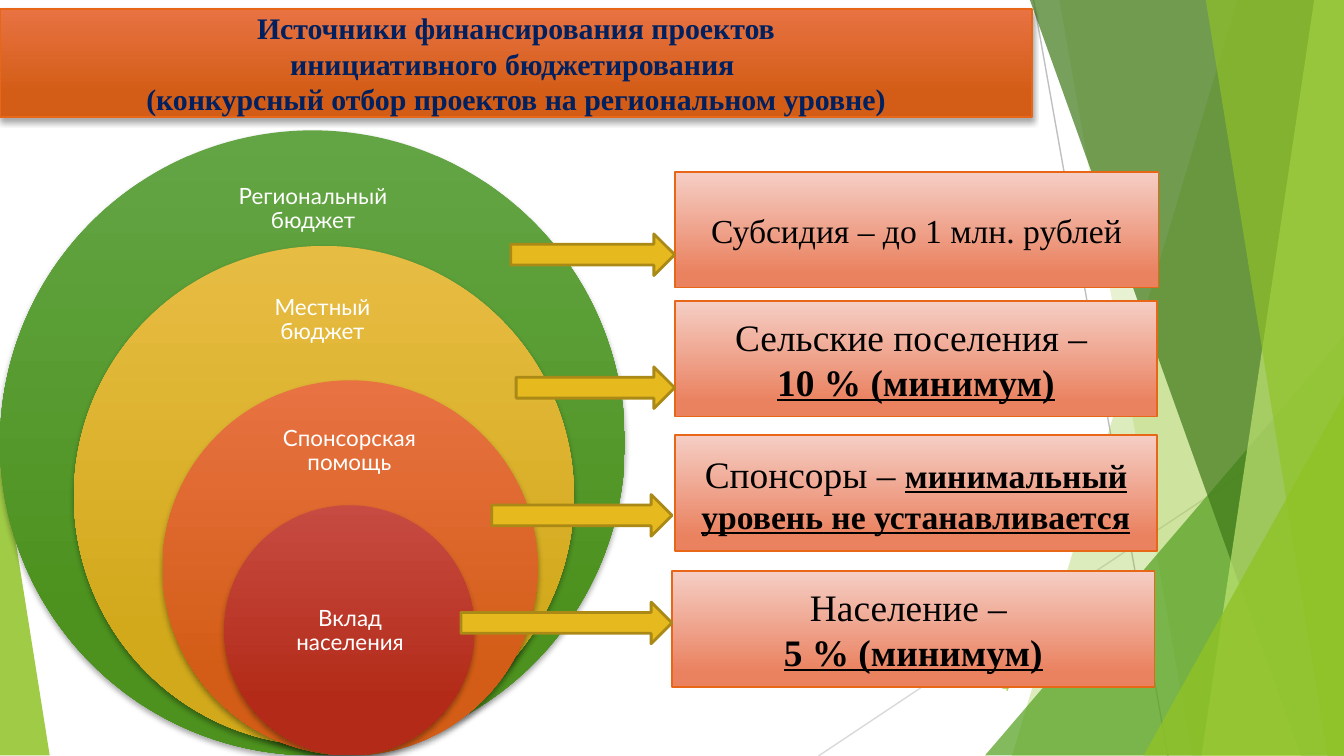
from lxml import etree
from pptx import Presentation
from pptx import util as u
from pptx.dml.color import RGBColor
from pptx.enum import shapes, text
from pptx.oxml import ns

WIDTH, BLEED = 10, -0.01
HEIGHT = WIDTH * 9 / 16
WHITE = RGBColor(0xFF, 0xFF, 0xFF)
BLACK = RGBColor(0x00, 0x00, 0x00)
NAVY = RGBColor(0x00, 0x20, 0x60)
LIME = RGBColor(0x90, 0xC2, 0x26)
PALE_LIME = RGBColor(0xC0, 0xE4, 0x74)
LEAF = RGBColor(0x54, 0xA0, 0x21)
FOREST = RGBColor(0x3F, 0x78, 0x19)
GREY = RGBColor(0xBF, 0xBF, 0xBF)
LIGHT_GREY = RGBColor(0xD9, 0xD9, 0xD9)
ORANGE_EDGE = RGBColor(0xE7, 0x66, 0x18)
GOLD = RGBColor(0xE6, 0xB9, 0x1E)
GOLD_EDGE = RGBColor(0xAA, 0x89, 0x16)
GREEN_BLEND = (RGBColor(0x63, 0xA5, 0x45), RGBColor(0x4D, 0x92, 0x1E), 0.78)
YELLOW_BLEND = (RGBColor(0xE7, 0xBC, 0x43), RGBColor(0xD2, 0xA9, 0x1B), 0.78)
ORANGE_BLEND = (RGBColor(0xE8, 0x72, 0x42), RGBColor(0xD3, 0x5D, 0x16), 0.78)
RED_BLEND = (RGBColor(0xC7, 0x4B, 0x42), RGBColor(0xB3, 0x2B, 0x18), 0.78)
PEACH_BLEND = (RGBColor(0xF5, 0xCE, 0xC5), RGBColor(0xEA, 0x81, 0x5F), 0.88)
SERIF, SANS = "Times New Roman", "Lato"


def paint(shape, color, opacity=100, edge=None, edge_width=1, shadow=False):
    """Fill a shape with one colour or a (top, bottom, stop) blend."""
    shape.shadow.inherit = False
    properties = shape.element.spPr
    if isinstance(color, RGBColor):
        shape.fill.solid()
        shape.fill.fore_color.rgb = color
        if opacity < 100:
            tint = properties.find(ns.qn("a:solidFill"))[0]
            etree.SubElement(tint, ns.qn("a:alpha"), val=str(opacity * 1000))
    else:
        top, bottom, position = color
        shape.fill.gradient()
        shape.fill.gradient_angle = 270
        for stop, tone, place in zip(shape.fill.gradient_stops, (top, bottom), (0, position)):
            stop.color.rgb = tone
            stop.position = place
    if edge is None:
        shape.line.fill.background()
    else:
        shape.line.color.rgb = edge
        shape.line.width = u.Pt(edge_width)
    if shadow:
        effects = properties.find(ns.qn("a:effectLst"))
        outer = etree.SubElement(effects, ns.qn("a:outerShdw"), blurRad=str(u.Pt(3)),
                                 dist=str(u.Pt(2)), dir="5400000", rotWithShape="0")
        shade = etree.SubElement(outer, ns.qn("a:srgbClr"), val="000000")
        etree.SubElement(shade, ns.qn("a:alpha"), val="35000")


def write(shape, paragraphs, color, base, align=text.PP_ALIGN.CENTER, spacing=None):
    """Each paragraph is a list of (words, font changes) runs."""
    frame = shape.text_frame
    frame.word_wrap = True
    frame.vertical_anchor = text.MSO_ANCHOR.MIDDLE
    for index, runs in enumerate(paragraphs):
        paragraph = frame.paragraphs[0] if index == 0 else frame.add_paragraph()
        paragraph.alignment = align
        if spacing:
            paragraph.line_spacing = spacing
        for words, changes in runs:
            run = paragraph.add_run()
            run.text = words
            run.font.color.rgb = color
            for name, value in {**base, **changes}.items():
                setattr(run.font, name, value)


presentation = Presentation()
presentation.slide_width = u.Inches(WIDTH)
presentation.slide_height = u.Inches(HEIGHT)
slide = presentation.slides.add_slide(presentation.slide_layouts[6])
kinds = shapes.MSO_SHAPE

# Thin background lines
for ends, color in [((7.69, 0, 8.69, HEIGHT), GREY), ((WIDTH, 3.02, 6.09, HEIGHT), LIGHT_GREY)]:
    line = slide.shapes.add_connector(shapes.MSO_CONNECTOR.STRAIGHT, *map(u.Inches, ends))
    line.line.color.rgb = color
    line.line.width = u.Pt(0.75)
    etree.SubElement(line.element.spPr, ns.qn("a:effectLst"))

# Background facets: bands by top and bottom x, triangles by box and apex
facets = [
    ("band", (9.21, 7.53), LIME, 30),
    ("band", (7.88, 8.87), LIME, 20),
    ("triangle", (7.33, 2.5, 2.67, 3.12, 1), LEAF, 72),
    ("band", (7.66, 9.68), FOREST, 70),
    ("band", (9.78, 8.94), PALE_LIME, 70),
    ("band", (8.97, 9.88), LIME, 65),
    ("triangle", (8.51, 2.94, 1.49, 2.68, 1), LIME, 80),
    ("triangle", (0, 3.29, 0.37, 2.33, 0), LIME, 85),
]
for kind, place, color, opacity in facets:
    if kind == "band":
        top_x, bottom_x = place
        corners = [(top_x, BLEED), (WIDTH, BLEED), (WIDTH, HEIGHT), (bottom_x, HEIGHT)]
        points = [(u.Inches(x), u.Inches(y)) for x, y in corners]
        builder = slide.shapes.build_freeform(*points[0])
        builder.add_line_segments(points[1:], close=True)
        facet = builder.convert_to_shape()
    else:
        *box, apex = place
        facet = slide.shapes.add_shape(kinds.ISOSCELES_TRIANGLE, *map(u.Inches, box))
        facet.adjustments[0] = apex
    paint(facet, color, opacity)

# Slide number
number = slide.shapes.add_textbox(*map(u.Inches, (7.05, 4.96, 0.56, 0.3)))
write(number, [[("4", {})]], LIME, {"name": SANS, "size": u.Pt(6.8)}, text.PP_ALIGN.RIGHT)

# Nested circles: left, top, diameter, blend, label, label box
circles = [
    (0, 0.97, 4.65, GREEN_BLEND, "Региональный бюджет", (1.68, 1.21, 1.3, 0.7)),
    (0.55, 1.83, 3.72, YELLOW_BLEND, "Местный бюджет", (1.75, 2.05, 1.3, 0.67)),
    (1.21, 2.83, 2.79, ORANGE_BLEND, "Спонсорская помощь", (1.95, 3.04, 1.3, 0.63)),
    (1.67, 3.76, 1.86, RED_BLEND, "Вклад населения", (1.95, 4.23, 1.31, 0.93)),
]
for left, top, size, blend, words, box in circles:
    circle = slide.shapes.add_shape(kinds.OVAL, *map(u.Inches, (left, top, size, size)))
    paint(circle, blend, shadow=True)
    label = slide.shapes.add_textbox(*map(u.Inches, box))
    for side in ("left", "top", "right", "bottom"):
        setattr(label.text_frame, f"margin_{side}", u.Inches(0.09))
    write(label, [[(words, {})]], WHITE, {"name": SANS, "size": u.Pt(12)}, spacing=0.9)

# Title
title = slide.shapes.add_shape(kinds.RECTANGLE, *map(u.Inches, (0, 0.07, 7.68, 0.8)))
paint(title, ORANGE_BLEND, edge=ORANGE_EDGE, shadow=True)
title_lines = [
    "Источники финансирования проектов",
    "инициативного бюджетирования ",
    "(конкурсный отбор проектов на региональном уровне)",
]
write(title, [[(words, {})] for words in title_lines], NAVY,
      {"name": SERIF, "size": u.Pt(16), "bold": True})

# Funding boxes
strong = {"bold": True, "underline": True}
small = {"size": u.Pt(18)}
boxes = [
    (5.02, 1.28, 3.6, [[("Субсидия – до 1 млн. рублей", small)]]),
    (5.02, 2.24, 3.59, [[("Сельские поселения – ", {})], [("10 % (минимум)", strong)]]),
    (5.02, 3.24, 3.59, [[("Спонсоры – ", {}),
                         ("минимальный уровень не устанавливается", {**strong, **small})]]),
    (5, 4.25, 3.59, [[("Население – ", {})], [("5 % (минимум)", strong)]]),
]
for left, top, width, paragraphs in boxes:
    panel = slide.shapes.add_shape(kinds.RECTANGLE, *map(u.Inches, (left, top, width, 0.86)))
    paint(panel, PEACH_BLEND, edge=ORANGE_EDGE)
    write(panel, paragraphs, BLACK, {"name": SERIF, "size": u.Pt(20)})

# Arrows from circles to boxes
for left, top, tip in [(3.8, 1.74, 5.02), (3.84, 2.73, 5.02), (3.66, 3.68, 5), (3.43, 4.48, 5)]:
    arrow = slide.shapes.add_shape(kinds.RIGHT_ARROW, *map(u.Inches, (left, top, tip - left, 0.31)))
    paint(arrow, GOLD, edge=GOLD_EDGE, edge_width=1.5)

presentation.save("out.pptx")
